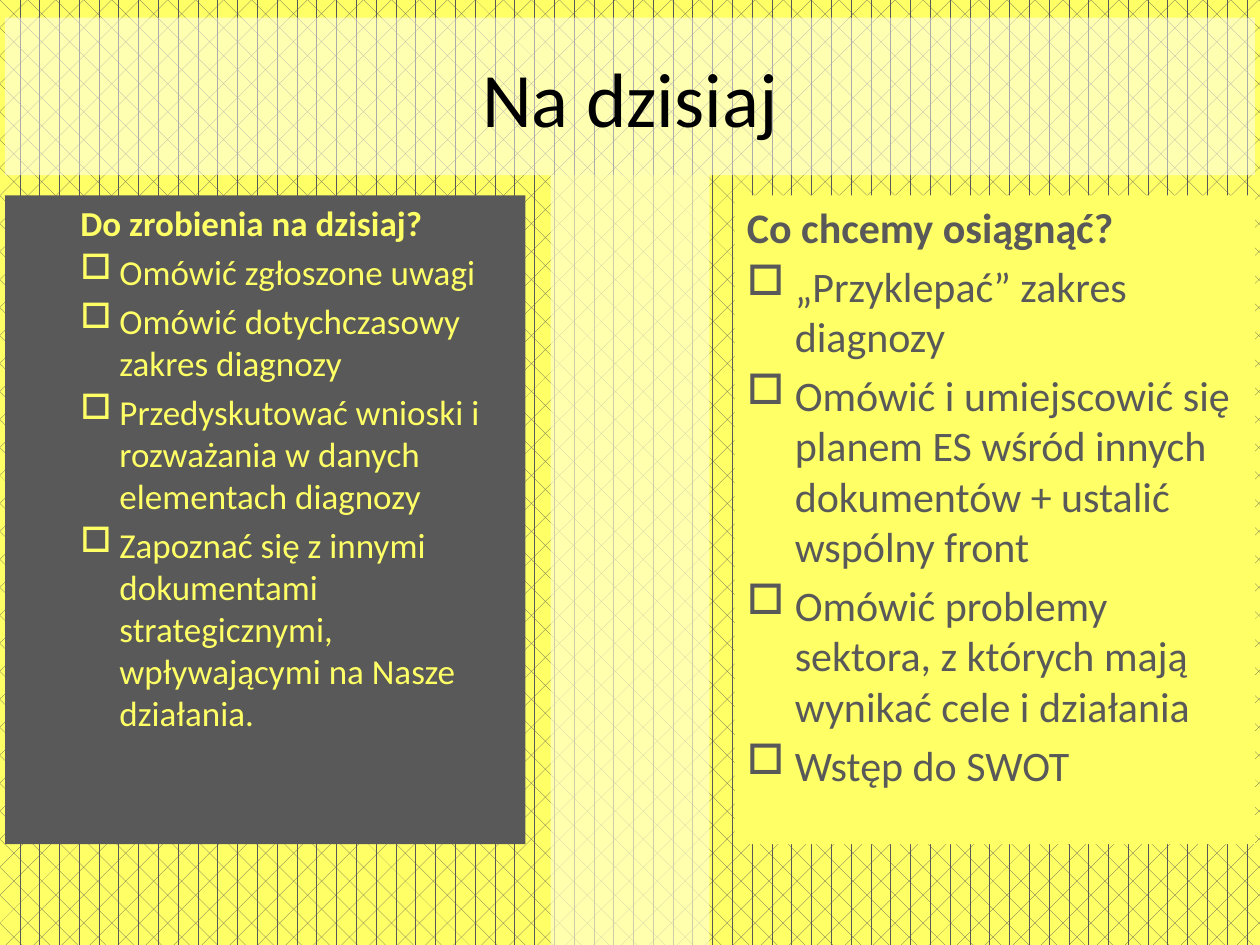
from lxml import etree
from pptx import Presentation
from pptx.dml.color import RGBColor
from pptx.enum.dml import MSO_PATTERN
from pptx.enum.shapes import MSO_SHAPE
from pptx.enum.text import MSO_ANCHOR, PP_ALIGN
from pptx.oxml.ns import qn
from pptx.util import Inches, Pt

DIVOT = MSO_PATTERN.DIVOT
RECTANGLE = MSO_SHAPE.RECTANGLE
TOP, MIDDLE = MSO_ANCHOR.TOP, MSO_ANCHOR.MIDDLE
LEFT, CENTER = PP_ALIGN.LEFT, PP_ALIGN.CENTER

YELLOW = RGBColor(0xFF, 0xFF, 0x66)
CREAM = RGBColor(0xFF, 0xFF, 0xCC)
GRAY = RGBColor(0x59, 0x59, 0x59)
WHITE = RGBColor(0xFF, 0xFF, 0xFF)
BLACK = RGBColor(0, 0, 0)

FONT = "Calibri"
MARGIN = 0.04
PANEL_WIDTH = 4.13

TASKS = [
    "Omówić zgłoszone uwagi",
    "Omówić dotychczasowy zakres diagnozy",
    "Przedyskutować wnioski i rozważania w danych elementach diagnozy",
    "Zapoznać się z innymi dokumentami strategicznymi, wpływającymi na Nasze działania.",
]
GOALS = [
    "„Przyklepać” zakres diagnozy",
    "Omówić i umiejscowić się planem ES wśród innych dokumentów + ustalić wspólny front",
    "Omówić problemy sektora, z których mają wynikać cele i działania",
    "Wstęp do SWOT",
]


def fill_solid(sp, color, opacity=100):
    sp.fill.solid()
    sp.fill.fore_color.rgb = color
    if opacity < 100:
        clr = sp._element.spPr.find(qn("a:solidFill")).find(qn("a:srgbClr"))
        etree.SubElement(clr, qn("a:alpha"), val=str(opacity * 1000))


def format_paragraph(p, size, color, bold=False):
    for r in p.runs:
        r.font.name = FONT
        r.font.size = Pt(size)
        r.font.bold = bold
        r.font.color.rgb = color


def indent(p, margin, hanging=0.0, bullet=None):
    pPr = p._p.get_or_add_pPr()
    pPr.set("marL", str(Inches(margin)))
    pPr.set("indent", str(-Inches(hanging)))
    if bullet:
        etree.SubElement(pPr, qn("a:buChar"), char=bullet)


def add_title(s, text):
    sp = s.shapes.title
    sp.left, sp.top = Inches(MARGIN), Inches(0.14)
    sp.width, sp.height = Inches(10 - 2 * MARGIN), Inches(1.25)
    fill_solid(sp, WHITE, 50)
    tf = sp.text_frame
    tf.text = text
    tf.vertical_anchor = MIDDLE
    p = tf.paragraphs[0]
    p.alignment = CENTER
    format_paragraph(p, 44, BLACK)


def add_rectangle(s, left, top, width, height, color, opacity=100):
    sp = s.shapes.add_shape(
        RECTANGLE, Inches(left), Inches(top), Inches(width), Inches(height))
    sp.shadow.inherit = False
    sp.line.fill.background()
    fill_solid(sp, color, opacity)
    return sp


def add_panel(s, left, heading, items, size, fill, color, margin, hanging):
    sp = add_rectangle(s, left, 1.55, PANEL_WIDTH, 5.15, fill)
    tf = sp.text_frame
    tf.word_wrap = True
    tf.vertical_anchor = TOP
    tf.text = "\n".join([heading] + items)
    for i, p in enumerate(tf.paragraphs):
        p.alignment = LEFT
        p.space_before = Pt(size * 0.2)
        format_paragraph(p, size, color, bold=i == 0)
        if i == 0:
            indent(p, margin)
        else:
            indent(p, margin + hanging, hanging, "□")


def main():
    prs = Presentation()
    prs.slide_width, prs.slide_height = Inches(10), Inches(7.5)
    s = prs.slides.add_slide(prs.slide_layouts[5])
    fill = s.background.fill
    fill.patterned()
    fill.pattern = DIVOT
    fill.fore_color.rgb = GRAY
    fill.back_color.rgb = YELLOW

    add_title(s, "Na dzisiaj")
    add_panel(s, MARGIN, "Do zrobienia na dzisiaj?", TASKS,
              20, GRAY, YELLOW, 0.5, 0.31)
    add_panel(s, 10 - MARGIN - PANEL_WIDTH, "Co chcemy osiągnąć?", GOALS,
              24, YELLOW, GRAY, 0, 0.38)
    add_rectangle(s, 4.37, 1.39, 1.26, 6.11, CREAM, 70)
    prs.save("out.pptx")


if __name__ == "__main__":
    main()
